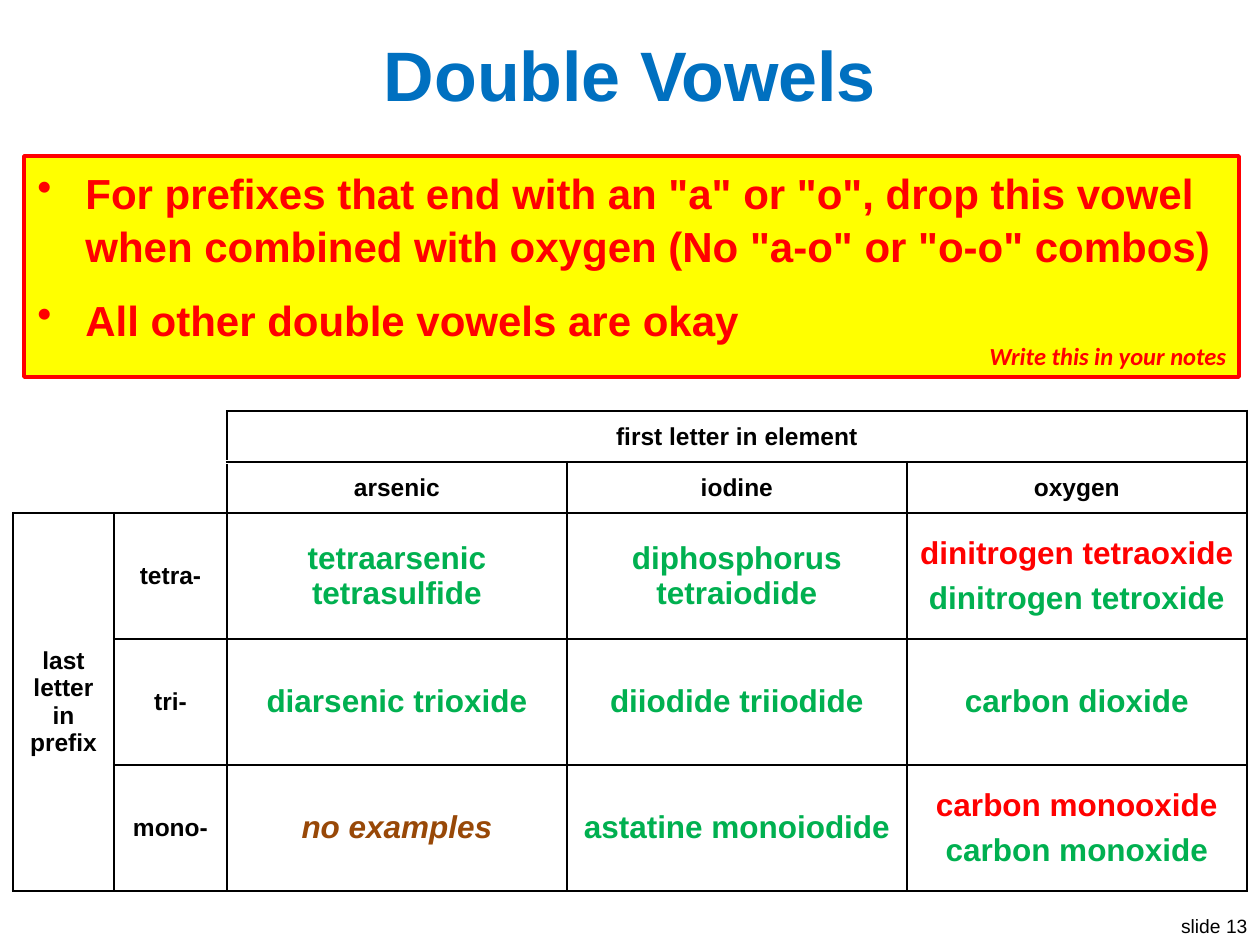
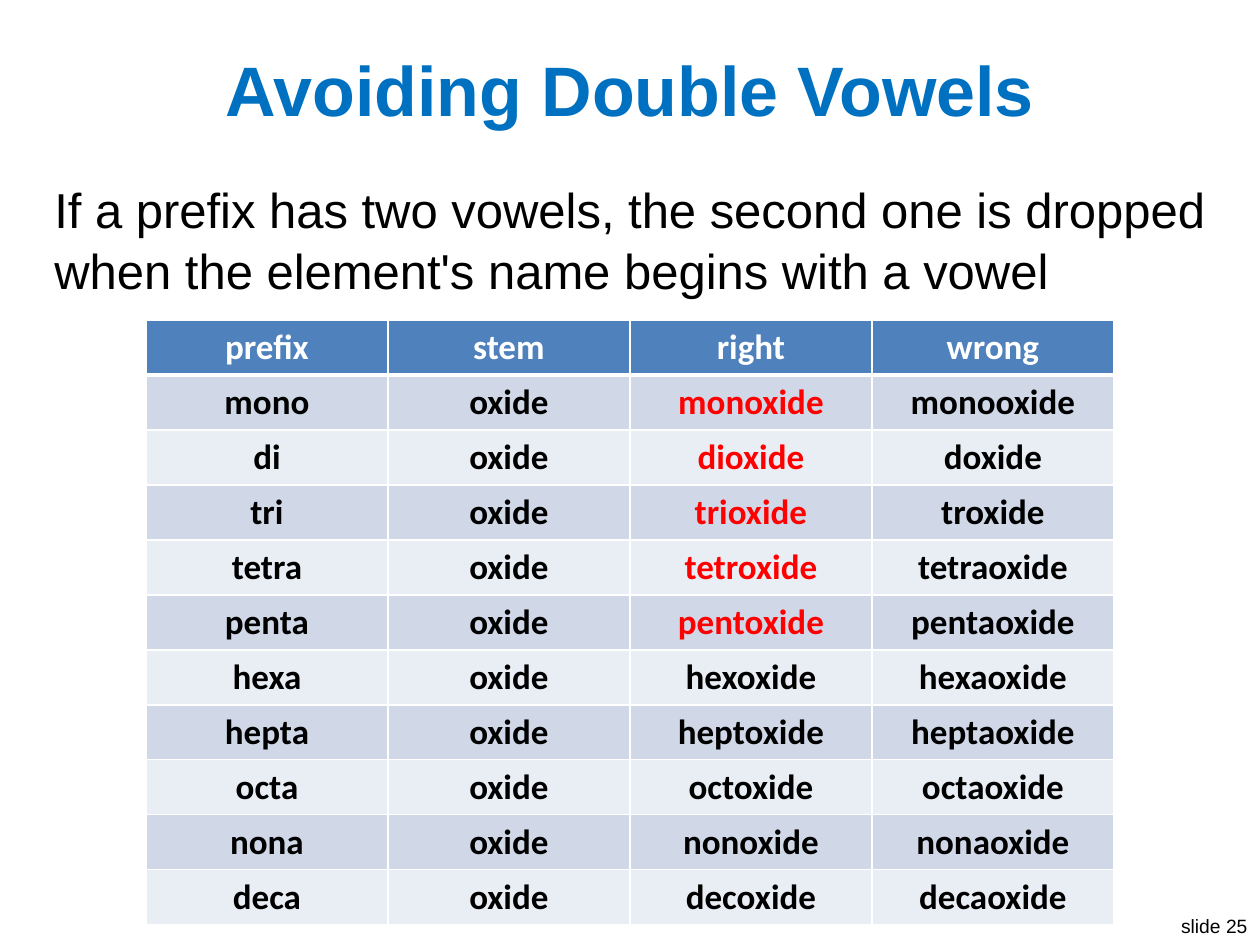
import pptx
import pptx.dml.color
import pptx.enum.shapes
import pptx.enum.text
import pptx.oxml.ns
import pptx.util
from lxml import etree

SCALE = 914400 / 126
COLORS = {
    "title": "0070C0", "text": "000000", "white": "FFFFFF", "red": "FF0000",
    "yellow": "FFFF00", "green": "00B050", "brown": "984807",
    "header": "4F81BD", "band_dark": "D0D8E8", "band_light": "E9EDF4",
}
ALIGN = pptx.enum.text.PP_ALIGN
ANCHOR = pptx.enum.text.MSO_ANCHOR

PREFIX_ROWS = [
    ("tetra-", [[("tetraarsenic tetrasulfide", "green")],
                [("diphosphorus tetraiodide", "green")],
                [("dinitrogen tetraoxide", "red"), ("dinitrogen tetroxide", "green")]]),
    ("tri-", [[("diarsenic trioxide", "green")],
              [("diiodide triiodide", "green")],
              [("carbon dioxide", "green")]]),
    ("mono-", [[("no examples", "brown")],
               [("astatine monoiodide", "green")],
               [("carbon monooxide", "red"), ("carbon monoxide", "green")]]),
]
OXIDES = [
    ("mono", "monoxide", "monooxide"), ("di", "dioxide", "doxide"),
    ("tri", "trioxide", "troxide"), ("tetra", "tetroxide", "tetraoxide"),
    ("penta", "pentoxide", "pentaoxide"), ("hexa", "hexoxide", "hexaoxide"),
    ("hepta", "heptoxide", "heptaoxide"), ("octa", "octoxide", "octaoxide"),
    ("nona", "nonoxide", "nonaoxide"), ("deca", "decoxide", "decaoxide"),
]
HIGHLIGHTED_ROWS = 5


def px(n):
    """Turn whole pixels into EMU."""
    return pptx.util.Emu(round(n * SCALE))


def rgb(name):
    """Look up a named colour."""
    return pptx.dml.color.RGBColor.from_string(COLORS[name])


def write(p, text, size, color="text", font="Arial", bold=False, italic=False, align=ALIGN.LEFT):
    """Put formatted text in a paragraph."""
    p.text = text
    p.alignment = align
    p.font.name = font
    p.font.size = pptx.util.Pt(size)
    p.font.color.rgb = rgb(color)
    p.font.bold = bold
    p.font.italic = italic


def add_text_frame(slide, box, wrap=True):
    """Add a text box and return its frame."""
    tf = slide.shapes.add_textbox(*map(px, box)).text_frame
    tf.word_wrap = wrap
    return tf


def add_slide(prs, title, title_box, number):
    """Add a slide with its title and slide number."""
    slide = prs.slides.add_slide(prs.slide_layouts[5])
    sp = slide.shapes.title
    sp.left, sp.top, sp.width, sp.height = map(px, title_box)
    tf = sp.text_frame
    tf.auto_size = pptx.enum.text.MSO_AUTO_SIZE.NONE
    tf.vertical_anchor = ANCHOR.MIDDLE
    write(tf.paragraphs[0], title, 40, "title", bold=True, align=ALIGN.CENTER)
    tf = add_text_frame(slide, (1166, 908, 94, 37), wrap=False)
    write(tf.paragraphs[0], f"slide {number}", 11, align=ALIGN.RIGHT)
    return slide


def add_bullet(p, indent):
    """Give a paragraph a hanging bullet."""
    ppr = p._p.get_or_add_pPr()
    ppr.set("marL", str(px(indent)))
    ppr.set("indent", str(-px(indent)))
    bullet = etree.Element(pptx.oxml.ns.qn("a:buChar"), char="•")
    ppr.insert_element_before(bullet, "a:tabLst", "a:defRPr", "a:extLst")


def add_notes_box(slide, box, rules):
    """Add the yellow box of rules to copy down."""
    x, y, w, h = box
    sp = slide.shapes.add_shape(pptx.enum.shapes.MSO_SHAPE.RECTANGLE, *map(px, box))
    sp.shadow.inherit = False
    sp.fill.solid()
    sp.fill.fore_color.rgb = rgb("yellow")
    sp.line.color.rgb = rgb("red")
    sp.line.width = pptx.util.Pt(2)
    sp.text_frame.vertical_anchor = ANCHOR.BOTTOM
    write(sp.text_frame.paragraphs[0], "Write this in your notes", 14, "red",
          "Calibri", bold=True, italic=True, align=ALIGN.RIGHT)
    tf = add_text_frame(slide, (x + 1, y + 3, w - 5, h - 29))
    for i, rule in enumerate(rules):
        p = tf.add_paragraph() if i else tf.paragraphs[0]
        write(p, rule, 24, "red", bold=True)
        p.space_before = pptx.util.Pt(12)
        p.line_spacing = 1.05
        add_bullet(p, 48)


def set_borders(cell, **sides):
    """Set cell borders, each side as (colour, points)."""
    tcpr = cell._tc.get_or_add_tcPr()
    for i, side in enumerate("LRTB"):
        color, width = sides[side]
        ln = etree.Element(pptx.oxml.ns.qn(f"a:ln{side}"), w=str(pptx.util.Pt(width)))
        fill = etree.SubElement(ln, pptx.oxml.ns.qn("a:solidFill"))
        etree.SubElement(fill, pptx.oxml.ns.qn("a:srgbClr"), val=COLORS[color])
        tcpr.insert(i, ln)


def fill_cell(cell, lines, size, font="Arial"):
    """Write centred bold lines, each a (text, colour) pair."""
    cell.vertical_anchor = ANCHOR.MIDDLE
    tf = cell.text_frame
    for i, (text, color) in enumerate(lines):
        p = tf.add_paragraph() if i else tf.paragraphs[0]
        write(p, text, size, color, font, True, color == "brown", ALIGN.CENTER)
        if i < len(lines) - 1:
            p.space_after = pptx.util.Pt(6)


def add_grid(slide, at, widths, heights):
    """Add an unbanded table with the given columns and rows."""
    box = (*at, sum(widths), sum(heights))
    table = slide.shapes.add_table(len(heights), len(widths), *map(px, box)).table
    table.first_row = table.horz_banding = False
    for col, width in zip(table.columns, widths):
        col.width = px(width)
    for row, height in zip(table.rows, heights):
        row.height = px(height)
    return table


def add_vowel_table(slide, at):
    """Add the table of prefix endings against element initials."""
    table = add_grid(slide, at, [101, 113] + [340] * 3, [51] * 2 + [126] * 3)
    black, white = ("text", 1.5), ("white", 1)
    for r in range(5):
        for c in range(5):
            cell = table.cell(r, c)
            cell.fill.background()
            if r < 2 and c < 2:
                set_borders(cell, L=white, T=white, R=black if c else white,
                            B=black if r else ("white", 3))
            else:
                set_borders(cell, L=black, R=black, T=black, B=black)
    table.cell(0, 2).merge(table.cell(0, 4))
    table.cell(2, 0).merge(table.cell(4, 0))
    fill_cell(table.cell(0, 2), [("first letter in element", "text")], 14)
    fill_cell(table.cell(2, 0), [("last letter in prefix", "text")], 14)
    for c, element in enumerate(["arsenic", "iodine", "oxygen"], 2):
        fill_cell(table.cell(1, c), [(element, "text")], 14)
    for r, (prefix, examples) in enumerate(PREFIX_ROWS, 2):
        fill_cell(table.cell(r, 1), [(prefix, "text")], 14)
        for c, lines in enumerate(examples, 2):
            fill_cell(table.cell(r, c), lines, 18)


def add_oxide_table(slide, at):
    """Add the banded table of right and wrong oxide names."""
    rows = [("prefix", "stem", "right", "wrong")]
    rows += [(prefix, "oxide", right, wrong) for prefix, right, wrong in OXIDES]
    table = add_grid(slide, at, [242] * 4, [55] * len(rows))
    thin, thick = ("white", 1), ("white", 3)
    for r, row in enumerate(rows):
        band = ("band_dark" if r % 2 else "band_light") if r else "header"
        for c, text in enumerate(row):
            cell = table.cell(r, c)
            cell.fill.solid()
            cell.fill.fore_color.rgb = rgb(band)
            set_borders(cell, L=thin, R=thin, T=thick if r == 1 else thin,
                        B=thin if r else thick)
            color = "text" if r else "white"
            if c == 2 and 1 <= r <= HIGHLIGHTED_ROWS:
                color = "red"
            fill_cell(cell, [(text, color)], 20, "Calibri")


def build_double_vowels(prs):
    """Build the slide with the rule and its examples."""
    slide = add_slide(prs, "Double Vowels", (25, 23, 1210, 101), 13)
    add_notes_box(slide, (24, 156, 1215, 221), [
        'For prefixes that end with an "a" or "o", drop this vowel '
        'when combined with oxygen (No "a-o" or "o-o" combos)',
        "All other double vowels are okay",
    ])
    add_vowel_table(slide, (13, 411))


def build_avoiding(prs):
    """Build the slide of oxide names."""
    slide = add_slide(prs, "Avoiding Double Vowels", (25, 38, 1210, 101), 25)
    add_oxide_table(slide, (146, 320))
    p = add_text_frame(slide, (42, 170, 1184, 131)).paragraphs[0]
    write(p, "If a prefix has two vowels, the second one is dropped "
             "when the element's name begins with a vowel", 28)
    p.line_spacing = 1.05


def main():
    """Build and save the presentation."""
    prs = pptx.Presentation()
    prs.slide_width, prs.slide_height = px(1260), px(945)
    build_double_vowels(prs)
    build_avoiding(prs)
    prs.save("out.pptx")


if __name__ == "__main__":
    main()
